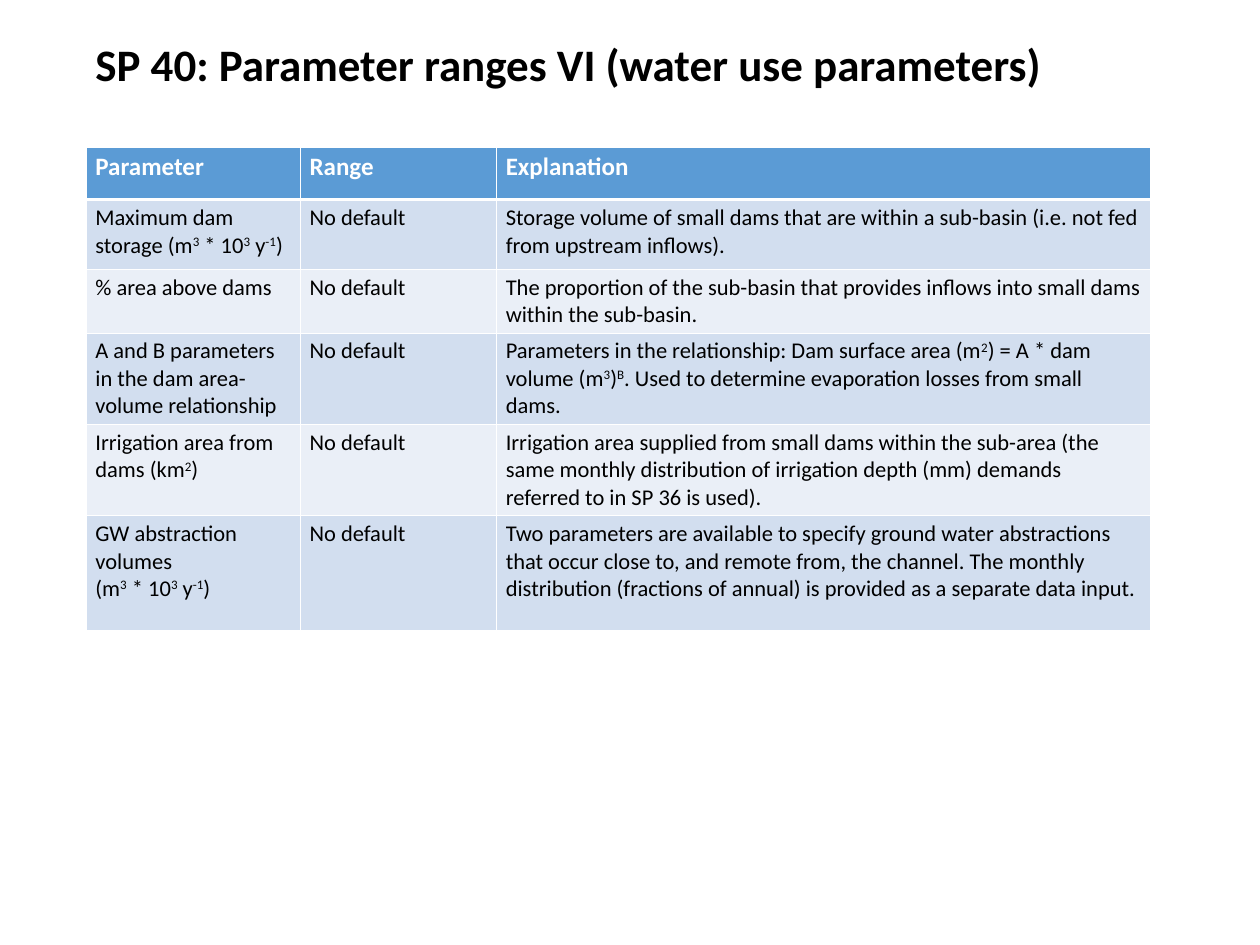
from dataclasses import dataclass

from lxml.etree import SubElement
from pptx import Presentation
from pptx.dml.color import RGBColor
from pptx.enum.text import MSO_ANCHOR, MSO_AUTO_SIZE, PP_ALIGN
from pptx.oxml.ns import qn
from pptx.util import Inches, Pt


@dataclass(frozen=True)
class Theme:
    font: str = "Calibri"
    text: str = "000000"
    white: str = "FFFFFF"
    header: str = "5B9BD5"
    bands: tuple = ("D2DEEF", "EAEFF7")
    title_size: int = 36
    header_size: int = 20
    body_size: int = 18
    border: int = 1
    header_border: int = 3


COLUMNS = [2.38, 2.18, 7.26]
ROW_HEIGHTS = [0.58, 0.77, 0.7, 0.98, 0.97, 1.27]
HEADER = ("Parameter", "Range", "Explanation")
PARAMETERS = [
    ("Maximum dam storage (m^3^ * 10^3^ y^-1^)",
     "Storage volume of small dams that are within a sub-basin "
     "(i.e. not fed from upstream inflows)."),
    ("% area above dams",
     "The proportion of the sub-basin that provides inflows into small dams "
     "within the sub-basin."),
    ("A and B parameters in the dam area-volume relationship",
     "Parameters in the relationship: Dam surface area (m^2^) = A * dam volume (m^3^)^B^. "
     "Used to determine evaporation losses from small dams."),
    ("Irrigation area from dams (km^2^)",
     "Irrigation area supplied from small dams within the sub-area (the same monthly "
     "distribution of irrigation depth (mm) demands referred to in SP 36 is used)."),
    ("GW abstraction volumes\n(m^3^ * 10^3^ y^-1^)",
     "Two parameters are available to specify ground water abstractions that occur close to, "
     "and remote from, the channel. The monthly distribution (fractions of annual) is provided "
     "as a separate data input."),
]


class SlideBuilder:
    def __init__(self, s, theme):
        self.s = s
        self.theme = theme

    def style(self, r, size, color, bold):
        r.font.name = self.theme.font
        r.font.size = Pt(size)
        r.font.bold = bold
        r.font.color.rgb = RGBColor.from_string(color)

    def title(self, text, left, top, width, height):
        sp = self.s.shapes.title
        sp.left, sp.top = Inches(left), Inches(top)
        sp.width, sp.height = Inches(width), Inches(height)
        tf = sp.text_frame
        tf.text = text
        tf.word_wrap = True
        tf.auto_size = MSO_AUTO_SIZE.NONE
        tf.vertical_anchor = MSO_ANCHOR.MIDDLE
        p = tf.paragraphs[0]
        p.alignment = PP_ALIGN.LEFT
        p.line_spacing = 0.9
        self.style(p.runs[0], self.theme.title_size, self.theme.text, True)

    def table(self, rows, left, top, widths, heights):
        frame = self.s.shapes.add_table(
            len(rows), len(widths), Inches(left), Inches(top),
            Inches(sum(widths)), Inches(sum(heights)))
        table = frame.table
        for column, width in zip(table.columns, widths):
            column.width = Inches(width)
        for i, (values, height) in enumerate(zip(rows, heights)):
            table.rows[i].height = Inches(height)
            for j, text in enumerate(values):
                self.cell(table.cell(i, j), text, i)

    def cell(self, cell, text, row):
        t = self.theme
        if row == 0:
            fill, size, color = t.header, t.header_size, t.white
        else:
            fill, size, color = t.bands[(row - 1) % 2], t.body_size, t.text
        cell.fill.solid()
        cell.fill.fore_color.rgb = RGBColor.from_string(fill)
        self.borders(cell, row)
        tf = cell.text_frame
        for k, line in enumerate(text.split("\n")):
            p = tf.add_paragraph() if k else tf.paragraphs[0]
            for n, piece in enumerate(line.split("^")):
                if piece:
                    r = p.add_run()
                    r.text = piece
                    self.style(r, size, color, row == 0)
                    if n % 2:
                        r.font._element.set("baseline", "30000")

    def borders(self, cell, row):
        t = self.theme
        tcPr = cell._tc.get_or_add_tcPr()
        for n, side in enumerate("LRTB"):
            thick = (row, side) in ((0, "B"), (1, "T"))
            width = t.header_border if thick else t.border
            ln = SubElement(tcPr, qn(f"a:ln{side}"), w=str(Pt(width)))
            solid = SubElement(ln, qn("a:solidFill"))
            SubElement(solid, qn("a:srgbClr"), val=t.white)
            tcPr.insert(n, ln)


def main():
    prs = Presentation()
    prs.slide_width, prs.slide_height = Inches(14), Inches(10.5)
    s = prs.slides.add_slide(prs.slide_layouts[5])
    builder = SlideBuilder(s, Theme())
    builder.title("SP 40: Parameter ranges VI (water use parameters)", 0.96, 0.38, 12.07, 0.72)
    rows = [HEADER] + [(name, "No default", note) for name, note in PARAMETERS]
    builder.table(rows, 0.96, 1.64, COLUMNS, ROW_HEIGHTS)
    prs.save("out.pptx")


if __name__ == "__main__":
    main()
